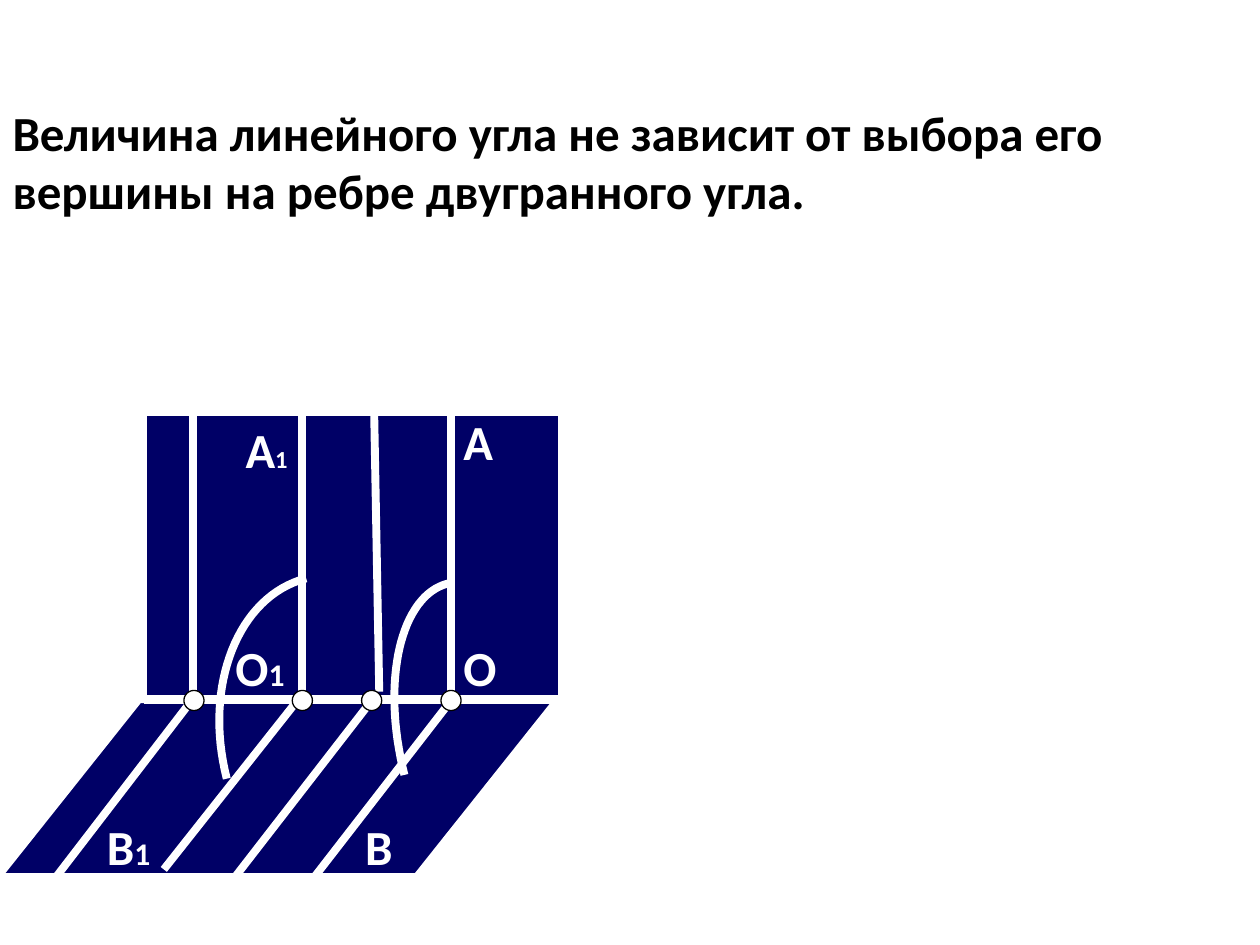
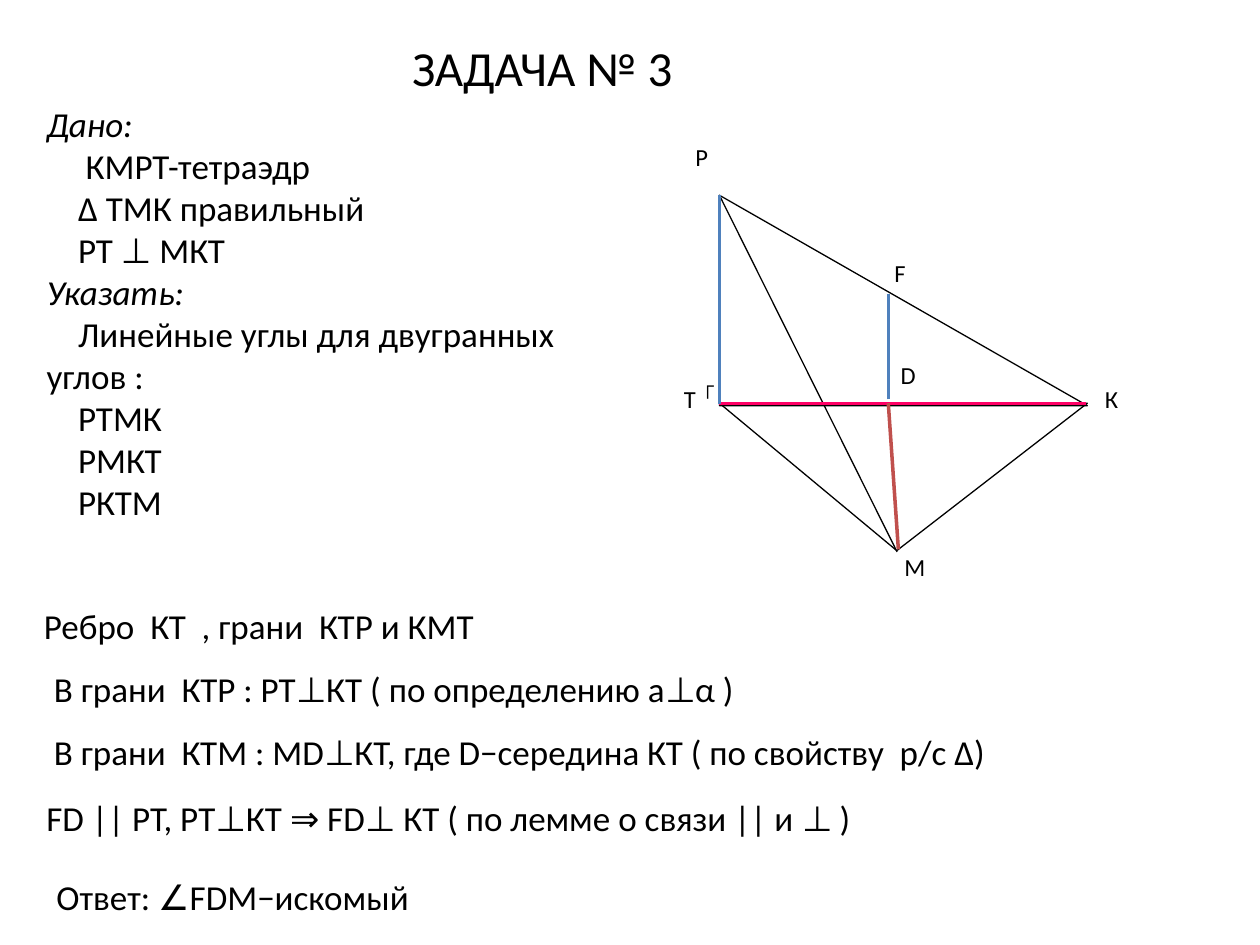
from lxml.etree import SubElement
from pptx import Presentation
from pptx.dml.color import RGBColor
from pptx.enum.shapes import MSO_CONNECTOR, MSO_SHAPE
from pptx.enum.text import MSO_ANCHOR, MSO_AUTO_SIZE, PP_ALIGN
from pptx.oxml.ns import qn
from pptx.util import Inches, Pt

COLOURS = {
    "ink": "000000",
    "paper": "FFFFFF",
    "navy": "000066",
    "pink": "FF0066",
    "red": "C0504D",
    "blue": "4F81BD",
}
FONT = "Calibri"


def colour(name):
    return RGBColor.from_string(COLOURS[name])


def place(shape, left, top, width, height):
    shape.left, shape.top = Inches(left), Inches(top)
    shape.width, shape.height = Inches(width), Inches(height)


def set_up_frame(shape):
    frame = shape.text_frame
    frame.word_wrap = True
    frame.auto_size = MSO_AUTO_SIZE.NONE
    frame.vertical_anchor = MSO_ANCHOR.TOP
    return frame


def write(para, text, size=20, ink="ink", bold=False, italic=False, indent=0):
    para.alignment = PP_ALIGN.LEFT
    para.space_before = Pt(0)
    properties = para._p.get_or_add_pPr()
    properties.set("marL", "0")
    properties.set("indent", str(Inches(indent)))
    if properties.find(qn("a:buNone")) is None:
        SubElement(properties, qn("a:buNone"))
    span = para.add_run()
    span.text = text
    span.font.name = FONT
    span.font.size = Pt(size)
    span.font.bold = bold
    span.font.italic = italic
    span.font.color.rgb = colour(ink)


def add_text(page, box, text, subscript="", subscript_size=18, **style):
    shape = page.shapes.add_textbox(*map(Inches, box))
    para = set_up_frame(shape).paragraphs[0]
    write(para, text, **style)
    if subscript:
        write(para, subscript, **{**style, "size": subscript_size})


def add_title(page, box, text, **style):
    title = page.shapes.title
    place(title, *box)
    write(set_up_frame(title).paragraphs[0], text, size=28, **style)


def outline(shape, ink, weight):
    shape.line.color.rgb = colour(ink)
    shape.line.width = Pt(weight)


def add_figure(page, kind, box, fill=None, line="ink", weight=0.75):
    shape = page.shapes.add_shape(kind, *map(Inches, box))
    shape.shadow.inherit = False
    if fill:
        shape.fill.solid()
        shape.fill.fore_color.rgb = colour(fill)
    else:
        shape.fill.background()
    outline(shape, line, weight)
    return shape


def add_line(page, start, end, ink="ink", weight=0.75):
    line = page.shapes.add_connector(MSO_CONNECTOR.STRAIGHT, *map(Inches, (*start, *end)))
    outline(line, ink, weight)
    SubElement(line._element.spPr, qn("a:effectLst"))


def add_arc(page, points, ink, weight, steps=32):
    def on_curve(t):
        weights = ((1 - t) ** 3, 3 * t * (1 - t) ** 2, 3 * t * t * (1 - t), t ** 3)
        return tuple(Inches(sum(w * p[axis] for w, p in zip(weights, points))) for axis in (0, 1))

    curve = [on_curve(step / steps) for step in range(steps + 1)]
    builder = page.shapes.build_freeform(*curve[0], scale=1.0)
    builder.add_line_segments(curve[1:], close=False)
    arc = builder.convert_to_shape()
    arc.shadow.inherit = False
    arc.fill.background()
    outline(arc, ink, weight)


def draw_dihedral_angle(page, left, top):
    def at(x, y):
        return left + x, top + y

    wall = add_figure(page, MSO_SHAPE.RECTANGLE, (*at(1.14, 0), 3.31, 2.26), "navy", "paper", 3.25)
    floor = add_figure(page, MSO_SHAPE.PARALLELOGRAM, (*at(0, 2.28), 4.41, 1.39), "navy", "paper", 3)
    floor.adjustments[0] = 0.796
    stroke = {"ink": "paper", "weight": 4.5}
    add_line(page, at(1.14, 2.28), at(4.37, 2.28), **stroke)

    rays = [
        ((2.4, 0), (2.4, 2.29), (2.36, 2.28), (1.3, 3.62)),
        ((1.53, 0), (1.53, 2.29), (1.49, 2.32), (0.43, 3.7)),
        ((2.97, 0), (3.01, 2.21), (2.95, 2.28), (1.85, 3.7)),
        ((3.58, 0), (3.58, 2.29), (3.58, 2.28), (2.48, 3.7)),
    ]
    for wall_start, wall_end, floor_start, floor_end in rays:
        add_line(page, at(*wall_start), at(*wall_end), **stroke)
        add_line(page, at(*floor_start), at(*floor_end), **stroke)

    arcs = [
        ((1.8, 2.9), (1.61, 2.16), (1.89, 1.45), (2.43, 1.31)),
        ((3.21, 2.87), (3.02, 2.12), (3.18, 1.44), (3.56, 1.35)),
    ]
    for points in arcs:
        add_arc(page, [at(*point) for point in points], **stroke)

    for x in (3.5, 2.32, 2.87, 1.46):
        add_figure(page, MSO_SHAPE.OVAL, (*at(x, 2.2), 0.16, 0.16), "paper")

    labels = [
        ("A", "", 3.58, -0.06, 0.48, 18),
        ("B", "", 2.8, 3.15, 0.47, 18),
        ("O", "", 3.58, 1.73, 0.47, 18),
        ("A", "1", 1.85, 0, 0.79, 14),
        ("O", "1", 1.77, 1.73, 0.79, 18),
        ("B", "1", 0.75, 3.15, 0.87, 18),
    ]
    for letter, index, x, y, width, index_size in labels:
        add_text(page, (*at(x, y), width, 0.57), letter, index, index_size,
                 size=28, ink="paper", bold=True)


def draw_tetrahedron(page, left, top):
    def at(x, y):
        return left + x, top + y

    base = add_figure(page, MSO_SHAPE.ISOSCELES_TRIANGLE, (*at(0, 1.65), 2.92, 1.17))
    base.rotation = 180
    base.adjustments[0] = 0.518
    add_figure(page, MSO_SHAPE.RIGHT_TRIANGLE, (*at(0, 0), 2.92, 1.67))

    lines = [
        ((0, 0), (1.41, 2.83), "ink", 0.75),
        ((0, 1.65), (2.91, 1.65), "pink", 1.5),
        ((1.34, 1.65), (1.42, 2.81), "red", 2),
        ((1.34, 1.62), (1.34, 0.78), "blue", 2),
        ((0, 0), (0, 1.66), "blue", 2),
    ]
    for start, end, ink, weight in lines:
        add_line(page, at(*start), at(*end), ink, weight)

    labels = [
        ("Т", -0.38, 1.45, 0.33),
        ("Р", -0.29, -0.47, 0.33),
        ("M", 1.37, 2.78, 0.42),
        ("К", 2.96, 1.45, 0.33),
        ("D", 1.34, 1.26, 0.36),
        ("F", 1.29, 0.45, 0.33),
        ("┌", -0.24, 1.33, 0.33),
    ]
    for letter, x, y, width in labels:
        add_text(page, (*at(x, y), width, 0.33), letter, size=14)


def fill_conditions(body, box):
    place(body, *box)
    frame = set_up_frame(body)
    conditions = [
        ("Дано:", 0),
        ("КМРТ-тетраэдр", 0.31),
        ("Δ ТМК правильный", 0.25),
        ("РТ ⊥ МКТ", 0.25),
        ("Указать:", 0),
        ("Линейные углы для двугранных углов :", 0.25),
        ("РТМК", 0.25),
        ("РМКТ", 0.25),
        ("РКТМ", 0.25),
    ]
    for number, (text, indent) in enumerate(conditions):
        para = frame.add_paragraph() if number else frame.paragraphs[0]
        write(para, text, italic=not indent, indent=indent)


def write_solution(page, left, top):
    steps = [
        ("Ребро  КТ  , грани  КТР и КМТ", 0, 0, 3.93),
        ("В грани  КТР : РT⊥КT ( по определению а⊥α )", 0.08, 0.5, 5.79),
        ("В грани  КТМ : МD⊥КT, где D−середина КТ ( по свойству  р/с Δ)", 0.08, 1, 9.6),
        ("FD || PT, РT⊥КT ⇒ FD⊥ КT ( по лемме о связи || и ⊥ )", 0.02, 1.52, 6.8),
        ("Ответ: ∠FDM−искомый", 0.1, 2.15, 3.07),
    ]
    for text, x, y, width in steps:
        add_text(page, (left + x, top + y, width, 0.43), text)


def build_theorem_page(deck):
    page = deck.slides.add_slide(deck.slide_layouts[5])
    add_title(page, (0, 0.76, 10, 1.74),
              "Величина линейного угла не зависит от выбора его вершины "
              "на ребре двугранного угла.", bold=True)
    draw_dihedral_angle(page, 0, 3.28)


def build_problem_page(deck):
    page = deck.slides.add_slide(deck.slide_layouts[1])
    add_title(page, (3.17, 0.25, 2.51, 0.57), "ЗАДАЧА № 3")
    fill_conditions(page.placeholders[1], (0.27, 0.76, 4.33, 3.93))
    draw_tetrahedron(page, 5.71, 1.55)
    write_solution(page, 0.25, 4.75)


def main():
    deck = Presentation()
    deck.slide_width, deck.slide_height = Inches(10), Inches(7.5)
    build_theorem_page(deck)
    build_problem_page(deck)
    deck.save("out.pptx")


if __name__ == "__main__":
    main()
